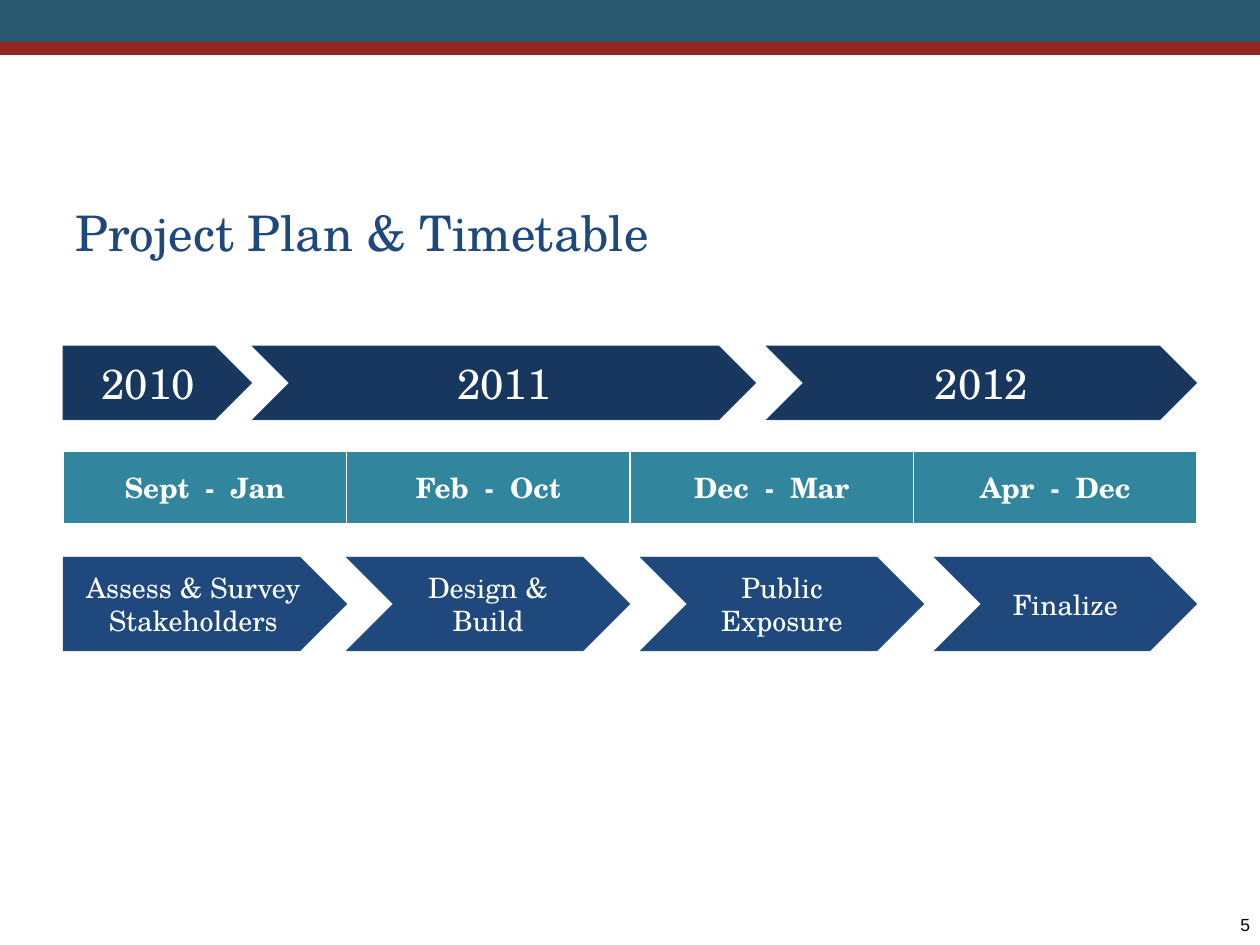
from lxml import etree
from pptx import Presentation
from pptx import util as u
from pptx.dml.color import RGBColor
from pptx.enum import shapes, text
from pptx.oxml.ns import qn

SCALE = 914400 / 126
WHITE, BLACK = RGBColor(255, 255, 255), RGBColor(0, 0, 0)
BLUE, NAVY = RGBColor(0x1F, 0x49, 0x7D), RGBColor(0x17, 0x37, 0x5E)
TEAL, EDGE = RGBColor(0x31, 0x85, 0x9C), RGBColor(0x3A, 0x5F, 0x8C)
BAND, STRIPE = RGBColor(0x2A, 0x59, 0x70), RGBColor(0x91, 0x27, 0x1F)
SERIF, SANS = "TeX Gyre Schola", "Arial"
LEFT, WIDTH = 63, 1134

TITLE = "Project Plan & Timetable"
PAGE = "5"
BARS = [(0, 42, BAND), (42, 13, STRIPE)]
PERIODS = ["Sept  -  Jan", "Feb  -  Oct", "Dec  -  Mar", "Apr  -  Dec"]
ARROW_ROWS = [
    dict(top=557, height=94, color=BLUE, size=16, steps=[
        ("Assess & Survey Stakeholders", 63, 284), ("Design & Build", 346, 284),
        ("Public Exposure", 640, 284), ("Finalize", 934, 263)]),
    dict(top=346, height=74, color=NAVY, size=24, steps=[
        ("2010", 63, 189), ("2011", 252, 504), ("2012", 766, 431)]),
]


def px(*lengths):
    return [u.Emu(round(length * SCALE)) for length in lengths]


def write(frame, words, size, color, align, name=SERIF, bold=False,
          anchor=text.MSO_ANCHOR.MIDDLE):
    frame.text = words
    frame.word_wrap = True
    frame.vertical_anchor = anchor
    paragraph = frame.paragraphs[0]
    paragraph.alignment = align
    font = paragraph.runs[0].font
    for key, value in dict(size=u.Pt(size), name=name, bold=bold).items():
        setattr(font, key, value)
    font.color.rgb = color


def add_block(slide, kind, box, color, edge=None):
    shape = slide.shapes.add_shape(kind, *px(*box))
    shape.shadow.inherit = False
    shape.fill.solid()
    shape.fill.fore_color.rgb = color
    if edge is None:
        shape.line.fill.background()
    else:
        shape.line.color.rgb = edge
        shape.line.width = u.Pt(0.25)
    return shape


def add_borders(cell):
    properties = cell._tc.get_or_add_tcPr()
    for index, side in enumerate(("lnL", "lnR", "lnT", "lnB")):
        line = etree.Element(qn(f"a:{side}"), w=str(u.Pt(1)))
        fill = etree.SubElement(line, qn("a:solidFill"))
        etree.SubElement(fill, qn("a:srgbClr"), val=str(WHITE))
        properties.insert(index, line)


def add_periods(slide):
    frame = slide.shapes.add_table(1, len(PERIODS), *px(LEFT, 451, WIDTH, 73))
    for cell, period in zip(frame.table.iter_cells(), PERIODS):
        cell.fill.solid()
        cell.fill.fore_color.rgb = TEAL
        write(cell.text_frame, period, 16, WHITE, text.PP_ALIGN.CENTER, bold=True)
        cell.vertical_anchor = text.MSO_ANCHOR.MIDDLE
        add_borders(cell)


def add_arrows(slide, row):
    for index, (label, left, width) in enumerate(row["steps"]):
        kind = shapes.MSO_SHAPE.CHEVRON if index else shapes.MSO_SHAPE.PENTAGON
        box = (left, row["top"], width, row["height"])
        arrow = add_block(slide, kind, box, row["color"], EDGE)
        write(arrow.text_frame, label, row["size"], WHITE, text.PP_ALIGN.CENTER)


def add_page_number(slide):
    frame = slide.shapes.add_textbox(*px(1040, 914, 210, 21)).text_frame
    for side in ("left", "right", "top", "bottom"):
        setattr(frame, f"margin_{side}", 0)
    write(frame, PAGE, 10, BLACK, text.PP_ALIGN.RIGHT, SANS,
          anchor=text.MSO_ANCHOR.TOP)


def main():
    presentation = Presentation()
    presentation.slide_width, presentation.slide_height = px(1260, 945)
    slide = presentation.slides.add_slide(presentation.slide_layouts[5])
    for top, height, color in BARS:
        add_block(slide, shapes.MSO_SHAPE.RECTANGLE, (0, top, 1260, height), color)
    title = slide.shapes.title
    title.left, title.top, title.width, title.height = px(LEFT, 158, WIDTH, 147)
    write(title.text_frame, TITLE, 28, BLUE, text.PP_ALIGN.LEFT)
    add_periods(slide)
    for row in ARROW_ROWS:
        add_arrows(slide, row)
    add_page_number(slide)
    presentation.save("out.pptx")


if __name__ == "__main__":
    main()
